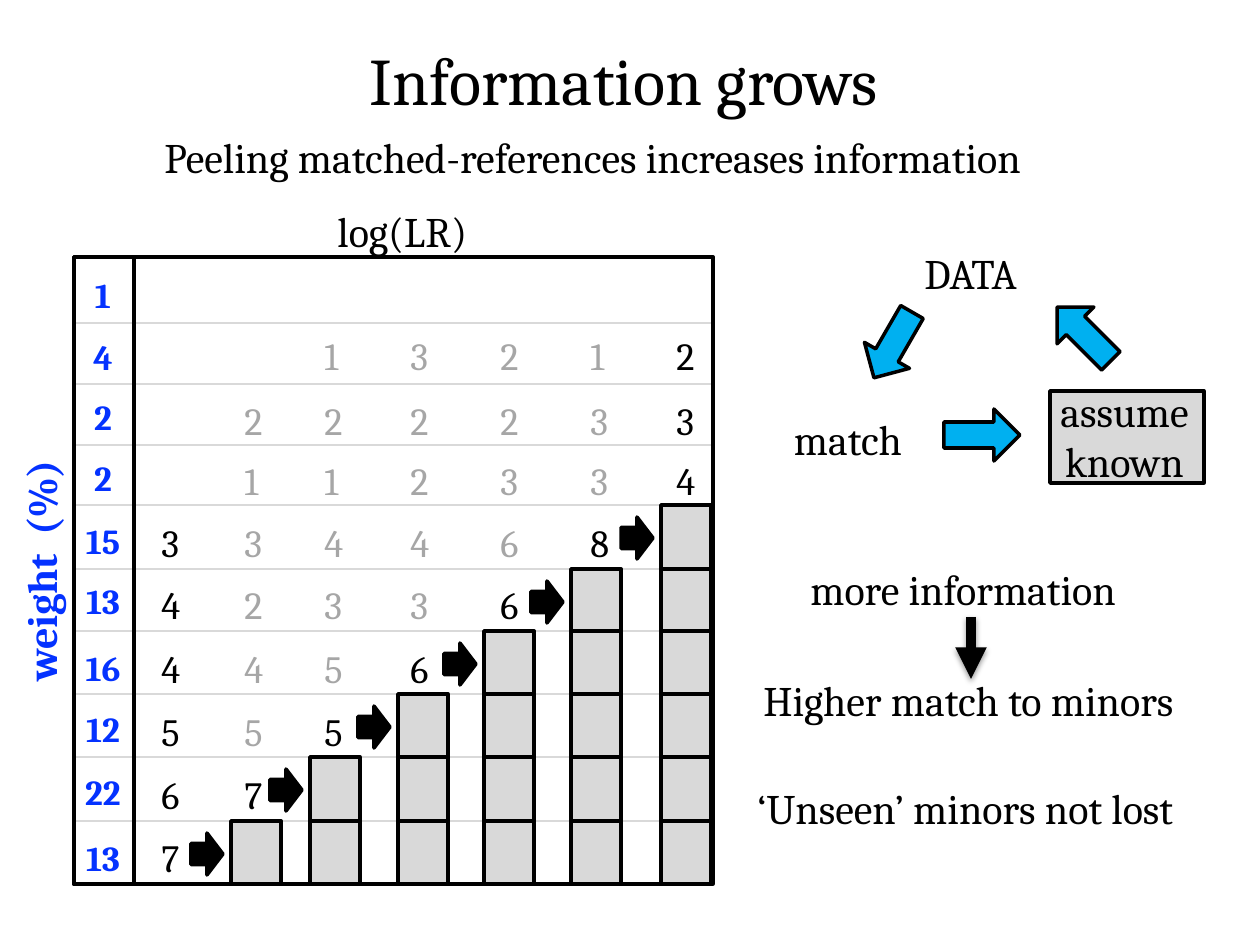
import pptx
import pptx.dml.color
import pptx.enum.shapes
import pptx.enum.text
import pptx.oxml
import pptx.oxml.ns
import pptx.util

EMU_PER_PX = 914400 / 126
FONT = "Cambria"
COLORS = {
    "black": "000000",
    "faded": "A6A6A6",
    "grid": "D9D9D9",
    "known": "D9D9D9",
    "cycle": "00B0F0",
    "weight": "0432FF",
}
SHAPE = pptx.enum.shapes.MSO_SHAPE
ALIGN = pptx.enum.text.PP_ALIGN
AUTO_SIZE = pptx.enum.text.MSO_AUTO_SIZE

ROW_LINES = [323, 384, 445, 505, 569, 631, 694, 757, 821]
TABLE_LEFT, TABLE_TOP, TABLE_RIGHT, TABLE_BOTTOM = 74, 257, 713, 884
WEIGHTS = [1, 4, 2, 2, 15, 13, 16, 12, 22, 13]
WEIGHT_TOPS = [267, 329, 389, 450, 513, 573, 640, 701, 764, 830]
SCORE_LEFTS = [149, 232, 312, 398, 488, 578, 664]
SCORE_TOPS = [326, 391, 451, 513, 575, 639, 702, 765, 828]
SCORES = [
    [None, None, 1, 3, 2, 1, 2],
    [None, 2, 2, 2, 2, 3, 3],
    [None, 1, 1, 2, 3, 3, 4],
    [3, 3, 4, 4, 6, 8],
    [4, 2, 3, 3, 6],
    [4, 4, 5, 6],
    [5, 5, 5],
    [6, 7],
    [7],
]
BLOCK_LEFTS = [231, 310, 398, 484, 571, 661]
BLOCK_TOPS = ROW_LINES[3:]


def px(value):
    return pptx.util.Emu(round(value * EMU_PER_PX))


def rgb(name):
    return pptx.dml.color.RGBColor.from_string(COLORS[name])


def write_text(text_frame, text, size=24, color="black", bold=False, align=None):
    paragraph = text_frame.paragraphs[0]
    paragraph.alignment = align
    run = paragraph.add_run()
    run.text = text
    run.font.name = FONT
    run.font.size = pptx.util.Pt(size)
    run.font.bold = bold
    run.font.color.rgb = rgb(color)


def add_text(slide, text, box, wrap=False, rotation=0, **text_format):
    shape = slide.shapes.add_textbox(*map(px, box))
    shape.rotation = rotation
    shape.text_frame.word_wrap = wrap
    shape.text_frame.auto_size = AUTO_SIZE.SHAPE_TO_FIT_TEXT
    write_text(shape.text_frame, text, **text_format)


def add_outlined(slide, kind, box, fill=None, rotation=0):
    shape = slide.shapes.add_shape(kind, *map(px, box))
    shape.shadow.inherit = False
    shape.rotation = rotation
    if fill:
        shape.fill.solid()
        shape.fill.fore_color.rgb = rgb(fill)
    else:
        shape.fill.background()
    shape.line.color.rgb = rgb("black")
    shape.line.width = pptx.util.Pt(2)


def add_line(slide, start, end, color, width):
    connector = slide.shapes.add_connector(
        pptx.enum.shapes.MSO_CONNECTOR.STRAIGHT, *map(px, start + end)
    )
    connector.line.color.rgb = rgb(color)
    connector.line.width = pptx.util.Pt(width)
    effects = pptx.oxml.parse_xml(f"<a:effectLst {pptx.oxml.ns.nsdecls('a')}/>")
    connector._element.spPr.append(effects)
    return connector, effects


def add_shadowed_arrow(slide, start, end):
    connector, effects = add_line(slide, start, end, "black", 6)
    namespace = pptx.oxml.ns.nsdecls("a")
    connector.line._get_or_add_ln().append(
        pptx.oxml.parse_xml(f'<a:tailEnd {namespace} type="triangle"/>')
    )
    effects.append(pptx.oxml.parse_xml(
        f'<a:outerShdw {namespace} blurRad="40000" dist="20000" dir="5400000" rotWithShape="0">'
        f'<a:srgbClr val="{COLORS["black"]}"><a:alpha val="38000"/></a:srgbClr></a:outerShdw>'
    ))


def add_title(slide, text):
    title = slide.shapes.title
    title.left, title.top, title.width, title.height = map(px, (57, 0, 1134, 158))
    title.text_frame.vertical_anchor = pptx.enum.text.MSO_ANCHOR.MIDDLE
    title.text_frame.auto_size = AUTO_SIZE.NONE
    write_text(title.text_frame, text, size=38, align=ALIGN.CENTER)


def add_scores(slide):
    for top, scores in zip(SCORE_TOPS, SCORES):
        for column, score in enumerate(scores):
            if score is None:
                continue
            highlighted = column in (0, len(scores) - 1)
            add_text(slide, str(score), (SCORE_LEFTS[column], top, 45, 59),
                     size=22, color="black" if highlighted else "faded")


def add_staircase(slide):
    for step, left in enumerate(BLOCK_LEFTS, start=1):
        tops = BLOCK_TOPS[-step:]
        for top in tops:
            add_outlined(slide, SHAPE.RECTANGLE, (left, top, 50, TABLE_BOTTOM - top), "known")
        add_outlined(slide, SHAPE.RIGHT_ARROW, (left - 40, tops[0] + 12, 32, 42), "black")


def add_score_table(slide):
    for y in ROW_LINES:
        add_line(slide, (TABLE_LEFT, y), (TABLE_RIGHT, y), "grid", 1.5)
    add_scores(slide)
    add_staircase(slide)
    height = TABLE_BOTTOM - TABLE_TOP
    for width in (TABLE_RIGHT - TABLE_LEFT, 60):
        add_outlined(slide, SHAPE.RECTANGLE, (TABLE_LEFT, TABLE_TOP, width, height))
    for top, weight in zip(WEIGHT_TOPS, WEIGHTS):
        add_text(slide, str(weight), (68, top, 70, 55), size=20,
                 color="weight", bold=True, align=ALIGN.CENTER)
    add_text(slide, "log(LR)", (325, 199, 183, 63))
    add_text(slide, "weight  (%)", (-83, 539, 247, 63), rotation=270,
             color="weight", bold=True)


def add_cycle(slide):
    add_outlined(slide, SHAPE.RECTANGLE, (1050, 391, 154, 92), "known")
    add_text(slide, "assume known", (1034, 379, 181, 115), wrap=True, align=ALIGN.CENTER)
    add_text(slide, "match", (771, 407, 154, 63), wrap=True, align=ALIGN.CENTER)
    add_text(slide, "DATA", (912, 241, 144, 63))
    for left, top, rotation in ((1058, 296, 135), (867, 307, 30), (956, 397, 270)):
        add_outlined(slide, SHAPE.DOWN_ARROW, (left, top, 52, 76), "cycle", rotation)


def add_conclusions(slide):
    add_text(slide, "more information", (798, 557, 358, 63))
    add_shadowed_arrow(slide, (971, 617), (971, 679))
    add_text(slide, "Higher match to minors", (751, 668, 476, 63), wrap=True)
    add_text(slide, "‘Unseen’ minors not lost", (745, 776, 484, 63))


def main():
    presentation = pptx.Presentation()
    presentation.slide_width, presentation.slide_height = px(1260), px(945)
    slide = presentation.slides.add_slide(presentation.slide_layouts[5])
    add_title(slide, "Information grows")
    add_text(slide, "Peeling matched-references increases information",
             (152, 125, 973, 63), wrap=True)
    add_score_table(slide)
    add_cycle(slide)
    add_conclusions(slide)
    presentation.save("out.pptx")


if __name__ == "__main__":
    main()
